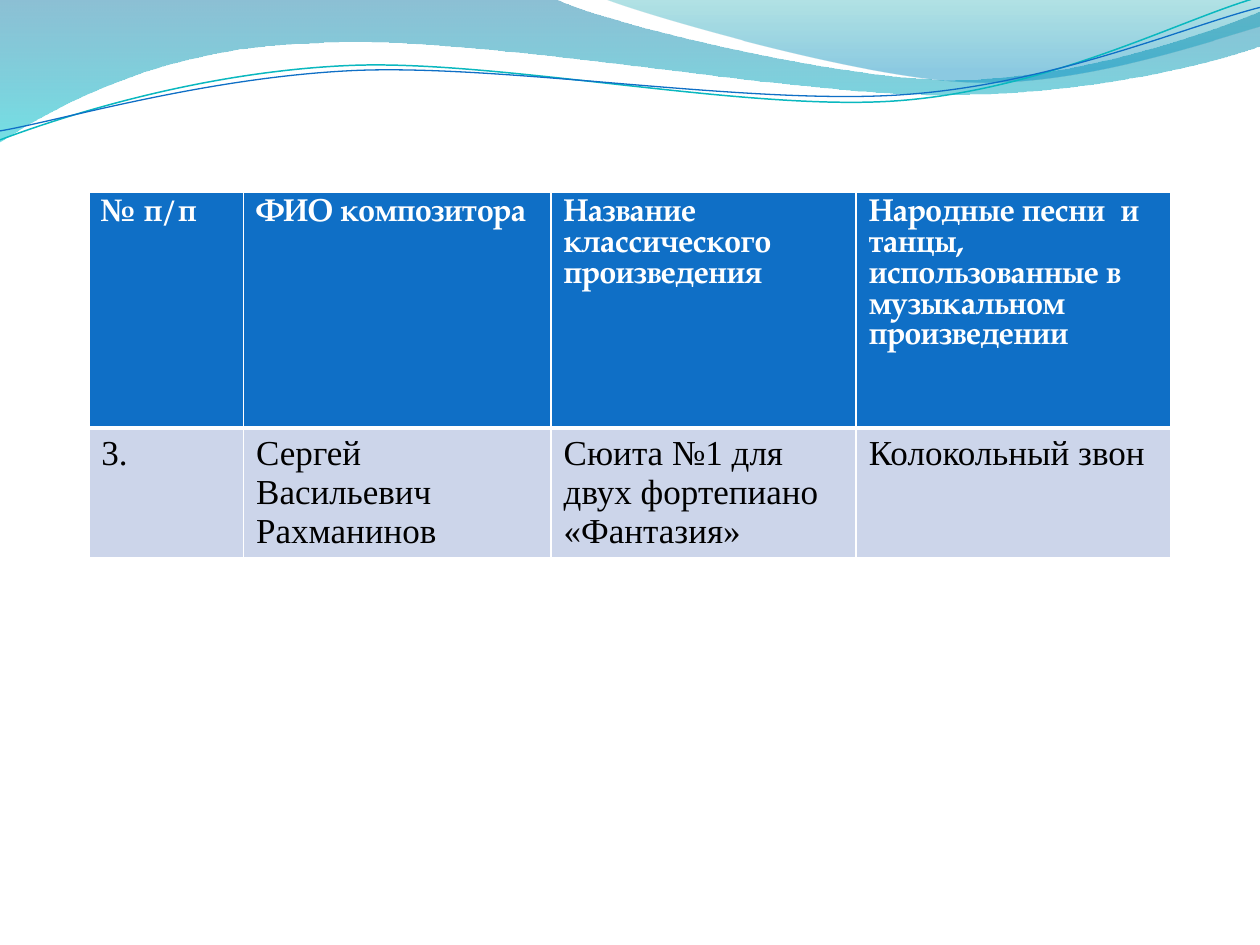
from dataclasses import dataclass
from math import cos, radians, sin

from lxml.etree import SubElement
from pptx import Presentation
from pptx.dml.color import RGBColor
from pptx.oxml.ns import qn
from pptx.util import Cm, Pt


@dataclass(frozen=True)
class Theme:
    """Colours, fonts and type sizes of the slide."""
    blue: str = "0F6FC6"
    teal: str = "0AB8BF"
    pale: str = "CCD5EA"
    white: str = "FFFFFF"
    black: str = "000000"
    header_font: str = "TeX Gyre Pagella"
    body_font: str = "Times New Roman"
    header_size: int = 18
    body_size: int = 20
    wide_wave: tuple = ((0, "0074A1", 45), (1, "00C6CF", 55))
    right_wave: tuple = ((0, "00A1A9", 30), (0.8, "008BBF", 45))


THEME = Theme()
LINE_TILT = -2.7

WIDE_WAVE = [
    [(0, 0)],
    [(11.18, -0.03)],
    [(12.09, 0.43), (16.87, 1.6), (19.25, 1.6)],
    [(21.67, 1.6), (24.33, 0.66), (25.4, 0.23)],
    [(25.43, 0.91)],
    [(24.97, 1.12), (22.1, 1.93), (18.95, 1.91)],
    [(15.8, 1.91), (9.7, 0.71), (6.53, 0.86)],
    [(3.28, 0.91), (1.17, 2.11), (-0.03, 2.87)],
]
RIGHT_WAVE = [
    [(12.17, -0.03)],
    [(12.93, 0.28), (17.32, 1.57), (19.53, 1.65)],
    [(21.74, 1.75), (24.41, 0.81), (25.4, 0.53)],
    [(25.4, 0)],
]
TEAL_LINE = [
    [(0, 2.82)],
    [(1.22, 2.36), (4.01, 1.45), (7.04, 1.32)],
    [(10.03, 1.19), (15.06, 2.26), (18.11, 2.03)],
    [(21.16, 1.8), (23.83, 0.38), (25.35, -0.05)],
]
BLUE_LINE = [
    [(0, 2.64)],
    [(1.19, 2.44), (4.17, 1.55), (7.19, 1.42)],
    [(10.24, 1.3), (15.16, 2.13), (18.21, 1.91)],
    [(21.23, 1.7), (23.9, 0.53), (25.4, 0.15)],
]

COLUMN_WIDTHS = (3.12, 6.2, 6.15, 6.35)
ROW_HEIGHTS = (4.75, 2.29)
HEADINGS = (
    "№ п/п",
    "ФИО композитора",
    "Название классического произведения",
    "Народные песни  и танцы, использованные в музыкальном произведении",
)
COMPOSER = (
    "3.",
    "Сергей Васильевич Рахманинов",
    "Сюита №1 для двух фортепиано «Фантазия»",
    "Колокольный звон",
)


def turn(segments, degrees, center):
    """Return the segments turned clockwise around a center."""
    angle = radians(degrees)
    middle_x, middle_y = center
    return [[(middle_x + (x - middle_x) * cos(angle) - (y - middle_y) * sin(angle),
              middle_y + (x - middle_x) * sin(angle) + (y - middle_y) * cos(angle))
             for x, y in segment] for segment in segments]


def add_outline(slide, segments, close):
    """Add a freeform whose three-point segments are cubic curves."""
    first, *others = [(Cm(x), Cm(y)) for segment in segments for x, y in segment]
    builder = slide.shapes.build_freeform(*first)
    builder.add_line_segments(others, close=close)
    shape = builder.convert_to_shape()
    shape.shadow.inherit = False
    outline = next(shape.element.iter(qn("a:path")))
    steps = iter(outline.findall(qn("a:lnTo")))
    for segment in segments[1:]:
        lines = [next(steps) for _ in segment]
        if len(lines) == 3:
            curve = SubElement(outline, qn("a:cubicBezTo"))
            lines[0].addprevious(curve)
            for line in lines:
                curve.append(line[0])
                outline.remove(line)
    return shape


def add_wave(slide, segments, stops):
    """Add a closed wave with a translucent downward gradient."""
    shape = add_outline(slide, segments, close=True)
    shape.line.fill.background()
    shape.fill.gradient()
    shape.fill.gradient_angle = 270
    for stop, (position, color, _) in zip(shape.fill.gradient_stops, stops):
        stop.position = position
        stop.color.rgb = RGBColor.from_string(color)
    colors = shape.element.spPr.iter(qn("a:srgbClr"))
    for element, (_, _, opacity) in zip(list(colors), stops):
        SubElement(element, qn("a:alpha"), val=str(opacity * 1000))


def add_curve(slide, segments, *, center, color, width):
    """Add an open curved line in a tilted frame."""
    shape = add_outline(slide, turn(segments, -LINE_TILT, center), close=False)
    shape.rotation = LINE_TILT
    shape.fill.background()
    shape.line.color.rgb = RGBColor.from_string(color)
    shape.line.width = Pt(width)


def set_borders(cell, color, bottom):
    """Draw one-point cell borders with a chosen bottom width."""
    properties = cell._tc.get_or_add_tcPr()
    widths = {"a:lnL": 1, "a:lnR": 1, "a:lnT": 1, "a:lnB": bottom}
    for index, (tag, width) in enumerate(widths.items()):
        border = SubElement(properties, qn(tag), w=str(Pt(width)))
        fill = SubElement(border, qn("a:solidFill"))
        SubElement(fill, qn("a:srgbClr"), val=color)
        properties.insert(index, border)


def write_cell(cell, text, *, font, size, color, bold, fill, bottom):
    """Fill a table cell with formatted text."""
    cell.fill.solid()
    cell.fill.fore_color.rgb = RGBColor.from_string(fill)
    set_borders(cell, THEME.white, bottom)
    paragraph = cell.text_frame.paragraphs[0]
    run = paragraph.add_run()
    run.text = text
    run.font.name = font
    run.font.size = Pt(size)
    run.font.bold = bold
    run.font.color.rgb = RGBColor.from_string(color)


def add_composer_table(slide):
    """Add the table of composers and the folk tunes they used."""
    frame = slide.shapes.add_table(
        len(ROW_HEIGHTS), len(COLUMN_WIDTHS), Cm(1.79), Cm(3.88),
        Cm(sum(COLUMN_WIDTHS)), Cm(sum(ROW_HEIGHTS)))
    table = frame.table
    table.horz_banding = False
    for column, width in zip(table.columns, COLUMN_WIDTHS):
        column.width = Cm(width)
    for row, height in zip(table.rows, ROW_HEIGHTS):
        row.height = Cm(height)
    frame.height = Cm(7.54)
    for cell, text in zip(table.rows[0].cells, HEADINGS):
        write_cell(cell, text, font=THEME.header_font, size=THEME.header_size,
                   color=THEME.white, bold=True, fill=THEME.blue, bottom=3)
    for cell, text in zip(table.rows[1].cells, COMPOSER):
        write_cell(cell, text, font=THEME.body_font, size=THEME.body_size,
                   color=THEME.black, bold=False, fill=THEME.pale, bottom=1)


def main():
    """Build the slide and save it."""
    presentation = Presentation()
    presentation.slide_width = Cm(25.4)
    presentation.slide_height = Cm(19.05)
    slide = presentation.slides.add_slide(presentation.slide_layouts[6])
    add_wave(slide, WIDE_WAVE, THEME.wide_wave)
    add_wave(slide, RIGHT_WAVE, THEME.right_wave)
    add_curve(slide, TEAL_LINE, center=(12.67, 1.46), color=THEME.teal, width=0.85)
    add_curve(slide, BLUE_LINE, center=(12.69, 1.5), color=THEME.blue, width=0.75)
    add_composer_table(slide)
    presentation.save("out.pptx")


if __name__ == "__main__":
    main()
